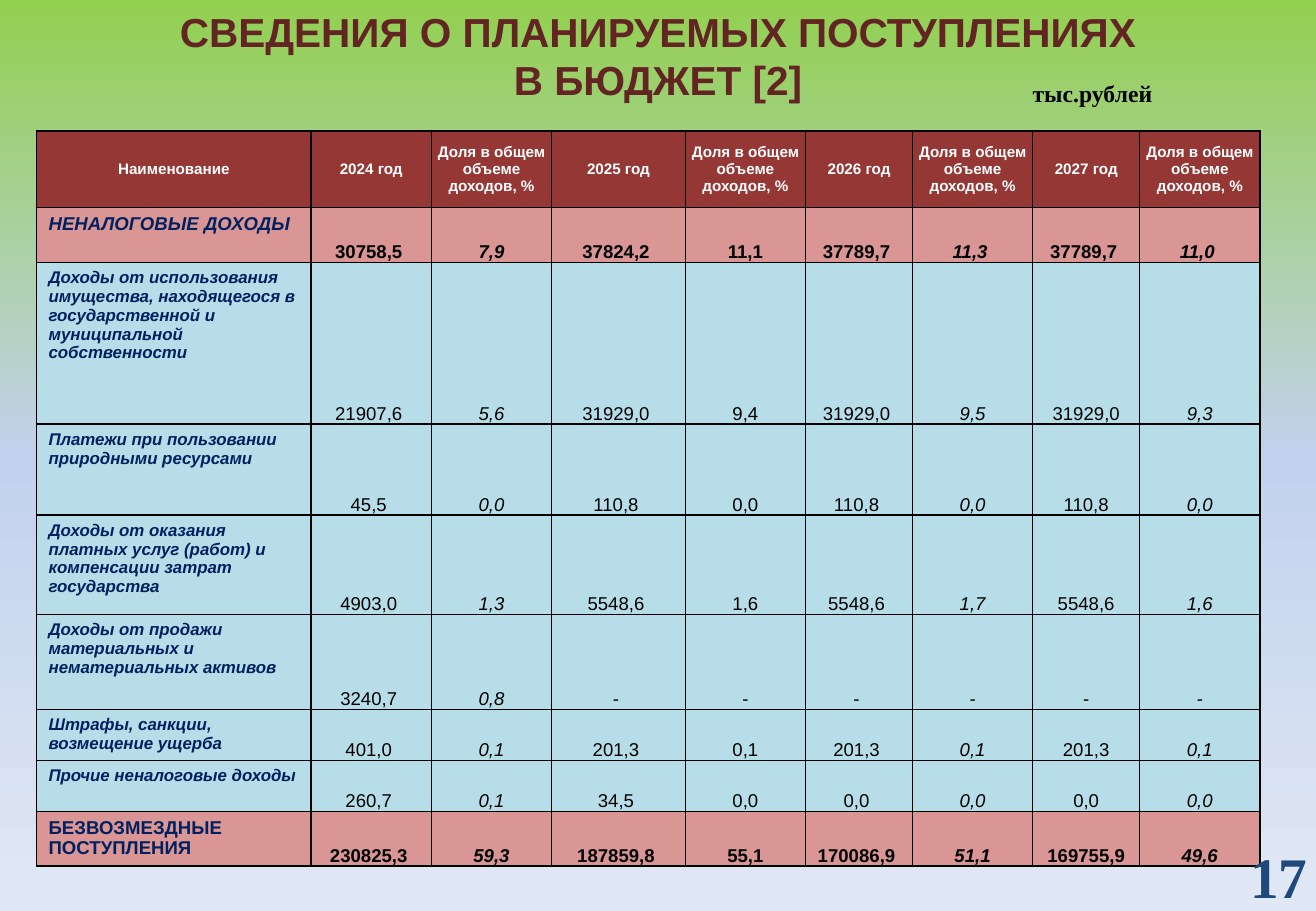
import copy

import pptx
import pptx.dml.color
import pptx.enum.text
import pptx.oxml
import pptx.oxml.ns
import pptx.util

Inches = pptx.util.Inches
Pt = pptx.util.Pt
ALIGN = pptx.enum.text.PP_ALIGN
ANCHOR = pptx.enum.text.MSO_ANCHOR
AUTO_SIZE = pptx.enum.text.MSO_AUTO_SIZE

COLORS = {
    "sky_top": "92D050", "sky_middle": "C2D1ED", "sky_bottom": "E1E8F5",
    "title": "632523", "number": "1F497D", "black": "000000", "white": "FFFFFF",
    "header": "953735", "total": "D99694", "detail": "B7DEE8", "name": "002060",
}
COLUMN_WIDTHS = [2.26, 0.99, 0.99, 1.1, 0.99, 0.88, 0.99, 0.88, 0.99]
ROW_HEIGHTS = [0.63, 0.45, 1.33, 0.75, 0.82, 0.78, 0.42, 0.42, 0.45]
VALUE_COLUMNS = (1, 3, 5)
ITALIC_COLUMNS = (2, 6, 8)
SHARE = "Доля в общем объеме доходов, %"
HEADER = ["Наименование", "2024 год", SHARE, "2025 год", SHARE,
          "2026 год", SHARE, "2027 год", SHARE]
INCOME = [
    ["НЕНАЛОГОВЫЕ ДОХОДЫ",
     "30758,5", "7,9", "37824,2", "11,1", "37789,7", "11,3", "37789,7", "11,0"],
    ["Доходы от использования имущества, находящегося в государственной и муниципальной собственности",
     "21907,6", "5,6", "31929,0", "9,4", "31929,0", "9,5", "31929,0", "9,3"],
    ["Платежи при пользовании природными ресурсами",
     "45,5", "0,0", "110,8", "0,0", "110,8", "0,0", "110,8", "0,0"],
    ["Доходы от оказания платных услуг (работ) и компенсации затрат государства",
     "4903,0", "1,3", "5548,6", "1,6", "5548,6", "1,7", "5548,6", "1,6"],
    ["Доходы от продажи материальных и нематериальных активов",
     "3240,7", "0,8", "-", "-", "-", "-", "-", "-"],
    ["Штрафы, санкции, возмещение ущерба",
     "401,0", "0,1", "201,3", "0,1", "201,3", "0,1", "201,3", "0,1"],
    ["Прочие неналоговые доходы",
     "260,7", "0,1", "34,5", "0,0", "0,0", "0,0", "0,0", "0,0"],
    ["БЕЗВОЗМЕЗДНЫЕ ПОСТУПЛЕНИЯ",
     "230825,3", "59,3", "187859,8", "55,1", "170086,9", "51,1", "169755,9", "49,6"],
]
TOTAL_ROWS = (1, len(INCOME))


def rgb(name):
    return pptx.dml.color.RGBColor.from_string(COLORS[name])


def set_text(frame, text, align, color, **font_values):
    frame.text = text
    for para in frame.paragraphs:
        para.alignment = align
        for span in para.runs:
            for attribute, value in font_values.items():
                setattr(span.font, attribute, value)
            span.font.color.rgb = rgb(color)


def paint_background(page):
    fill = page.background.fill
    fill.gradient()
    fill.gradient_angle = 270
    stop_list = page.background._cSld.find(".//" + pptx.oxml.ns.qn("a:gsLst"))
    stop_list.insert(1, copy.deepcopy(stop_list[0]))
    names = ["sky_top", "sky_middle", "sky_bottom"]
    for stop, name, position in zip(fill.gradient_stops, names, (0, 0.5, 1)):
        stop.color.rgb = rgb(name)
        stop.position = position


def add_title(page, left, top, width, height):
    title = page.shapes.title
    box = {"left": left, "top": top, "width": width, "height": height}
    for attribute, value in box.items():
        setattr(title, attribute, Inches(value))
    frame = title.text_frame
    frame.auto_size = AUTO_SIZE.NONE
    frame.vertical_anchor = ANCHOR.MIDDLE
    set_text(frame, "СВЕДЕНИЯ О ПЛАНИРУЕМЫХ ПОСТУПЛЕНИЯХ\nВ БЮДЖЕТ [2]",
             ALIGN.CENTER, "title", name="Arial", size=Pt(24), bold=True)


def add_label(page, box, text, align, color, size, wrap):
    frame = page.shapes.add_textbox(*map(Inches, box)).text_frame
    frame.word_wrap = wrap
    frame.auto_size = AUTO_SIZE.SHAPE_TO_FIT_TEXT
    set_text(frame, text, align, color, name="Times New Roman", size=Pt(size), bold=True)


def add_borders(cell):
    properties = cell._tc.get_or_add_tcPr()
    for side in ("lnL", "lnR", "lnT", "lnB"):
        properties.append(pptx.oxml.parse_xml(
            f'<a:{side} {pptx.oxml.ns.nsdecls("a")} w="{Pt(1)}"><a:solidFill>'
            f'<a:srgbClr val="{COLORS["black"]}"/></a:solidFill></a:{side}>'))


def cell_format(row, column):
    """Return fill, anchor, margins (left, top, right, bottom), alignment, text colour and font."""
    if row == 0:
        return ("header", ANCHOR.MIDDLE, (0, 0, 0, 0), ALIGN.CENTER, "white",
                {"size": Pt(9), "bold": True, "italic": False})
    is_total = row in TOTAL_ROWS
    fill = "total" if is_total else "detail"
    if column == 0:
        return (fill, ANCHOR.TOP, (0.1, 0.05, 0.1, 0.05), ALIGN.LEFT, "name",
                {"size": Pt(11 if is_total else 10), "bold": True,
                 "italic": row != len(INCOME)})
    shifted = column in VALUE_COLUMNS or (row == 1 and column > 5)
    margins = (0, 0, 0.04, 0) if shifted else (0.01, 0.01, 0.01, 0)
    return (fill, ANCHOR.BOTTOM, margins, ALIGN.CENTER, "black",
            {"size": Pt(11), "bold": is_total, "italic": column in ITALIC_COLUMNS})


def add_income_table(page, left, top):
    rows = [HEADER] + INCOME
    size = (sum(COLUMN_WIDTHS), sum(ROW_HEIGHTS))
    table = page.shapes.add_table(
        len(rows), len(HEADER), *map(Inches, (left, top, *size))).table
    table.first_row = table.horz_banding = False
    for column, width in zip(table.columns, COLUMN_WIDTHS):
        column.width = Inches(width)
    for row, height in zip(table.rows, ROW_HEIGHTS):
        row.height = Inches(height)
    for row_index, texts in enumerate(rows):
        for column_index, text in enumerate(texts):
            cell = table.cell(row_index, column_index)
            fill, anchor, margins, align, color, font = cell_format(row_index, column_index)
            add_borders(cell)
            cell.fill.solid()
            cell.fill.fore_color.rgb = rgb(fill)
            cell.vertical_anchor = anchor
            for side, margin in zip(("left", "top", "right", "bottom"), margins):
                setattr(cell, f"margin_{side}", Inches(margin))
            set_text(cell.text_frame, text, align, color, name="Arial", **font)


def main():
    deck = pptx.Presentation()
    deck.slide_width = Inches(10.83)
    deck.slide_height = Inches(7.5)
    page = deck.slides.add_slide(deck.slide_layouts.get_by_name("Title Only"))
    paint_background(page)
    add_income_table(page, 0.3, 1.08)
    add_label(page, (8.25, 0.6, 1.48, 0.34), "тыс.рублей", ALIGN.CENTER, "black", 14, True)
    add_title(page, 0, 0, 10.83, 0.91)
    add_label(page, (10.19, 6.88, 0.68, 0.67), "17", ALIGN.LEFT, "number", 34, False)
    deck.save("out.pptx")


if __name__ == "__main__":
    main()
